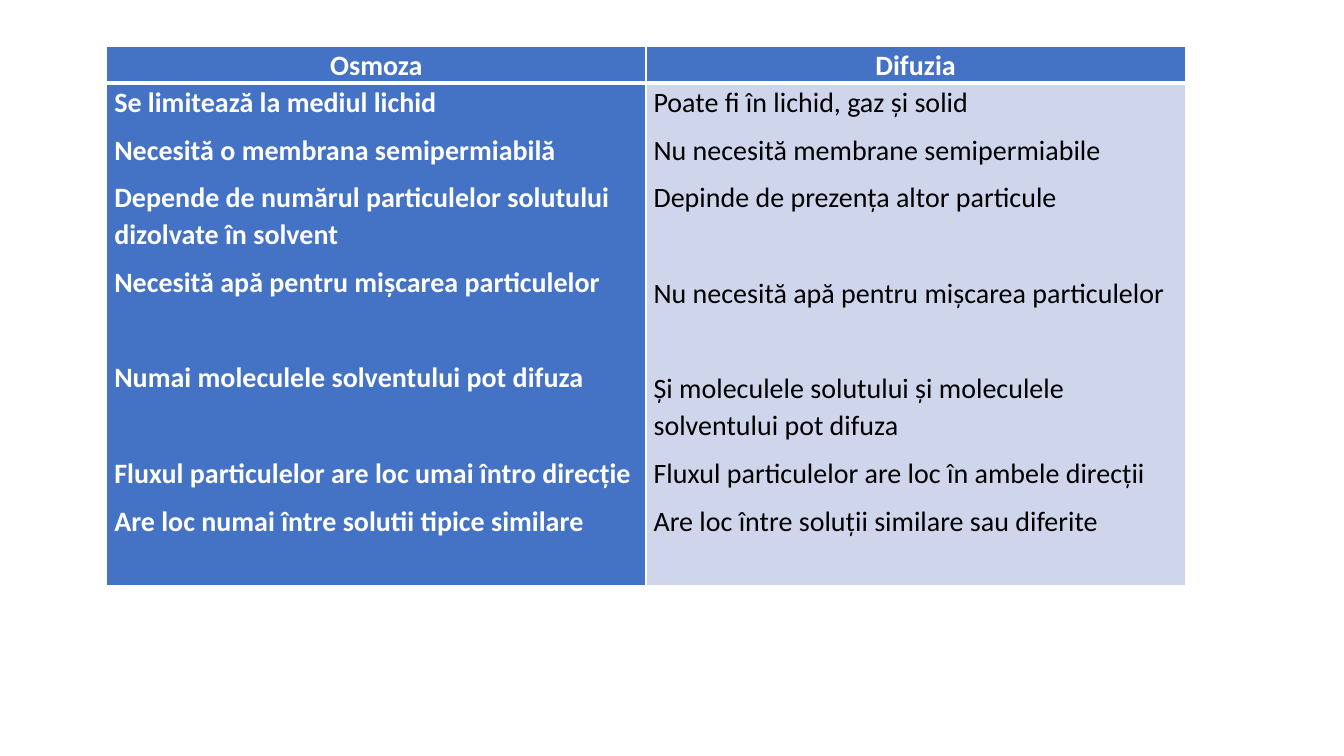
from dataclasses import dataclass

from lxml.etree import SubElement
from pptx import Presentation
from pptx.dml.color import RGBColor
from pptx.enum.text import PP_ALIGN as Align
from pptx.oxml.ns import qn
from pptx.util import Cm, Pt


@dataclass(frozen=True)
class Theme:
    font: str = "Calibri"
    size: int = 20
    blue: str = "4472C4"
    pale: str = "CFD5EA"
    white: str = "FFFFFF"
    black: str = "000000"
    thin: float = 1
    thick: float = 3
    line_spacing: float = 1.07
    gap: int = 8
    wide_gap: int = 42


theme = Theme()

# Each concept: heading, body fill, body text colour, body bold, statements with the space after them
concepts = [
    ("Osmoza", theme.blue, theme.white, True, [
        ("Se limitează la mediul lichid", theme.gap),
        ("Necesită o membrana semipermiabilă", theme.gap),
        ("Depende de numărul particulelor solutului dizolvate în solvent", theme.gap),
        ("Necesită apă pentru mișcarea particulelor", theme.wide_gap),
        ("Numai moleculele solventului pot difuza", theme.wide_gap),
        ("Fluxul particulelor are loc umai întro direcție", theme.gap),
        ("Are loc numai între solutii tipice similare", theme.gap),
    ]),
    ("Difuzia", theme.pale, theme.black, False, [
        ("Poate fi în lichid, gaz și solid", theme.gap),
        ("Nu necesită membrane semipermiabile", theme.gap),
        ("Depinde de prezența altor particule", theme.wide_gap),
        ("Nu necesită apă pentru mișcarea particulelor", theme.wide_gap),
        ("Și moleculele solutului și moleculele solventului pot difuza", theme.gap),
        ("Fluxul particulelor are loc în ambele direcții", theme.gap),
        ("Are loc între soluții similare sau diferite", theme.gap),
    ]),
]


def style_cell(cell, fill, borders):
    """Set margins, white borders (side to width in points) and fill."""
    margins = {"margin_left": Cm(0.19), "margin_right": Cm(0.19),
               "margin_top": Cm(0), "margin_bottom": Cm(0)}
    for name, value in margins.items():
        setattr(cell, name, value)
    properties = cell._tc.get_or_add_tcPr()
    for side, width in borders.items():
        border = SubElement(properties, qn(f"a:ln{side}"), w=str(Pt(width)))
        paint = SubElement(border, qn("a:solidFill"))
        SubElement(paint, qn("a:srgbClr"), val=theme.white)
    cell.fill.solid()
    cell.fill.fore_color.rgb = RGBColor.from_string(fill)


def write_statements(cell, statements, color, bold, align):
    frame = cell.text_frame
    for index, (statement, space_after) in enumerate(statements):
        paragraph = frame.add_paragraph() if index else frame.paragraphs[0]
        layout = {"alignment": align, "line_spacing": theme.line_spacing,
                  "space_after": Pt(space_after)}
        for name, value in layout.items():
            setattr(paragraph, name, value)
        run = paragraph.add_run()
        run.text = statement
        look = {"name": theme.font, "size": Pt(theme.size), "bold": bold}
        for name, value in look.items():
            setattr(run.font, name, value)
        run.font.color.rgb = RGBColor.from_string(color)


prs = Presentation()
prs.slide_width, prs.slide_height = Cm(33.87), Cm(19.05)
slide = prs.slides.add_slide(prs.slide_layouts[6])

column_width, heading_height, body_height = Cm(13.59), Cm(0.92), Cm(12.67)
comparison = slide.shapes.add_table(
    2, len(concepts), Cm(2.69), Cm(1.17),
    column_width * len(concepts), heading_height + body_height).table
comparison.first_col = True
comparison.rows[0].height = heading_height
comparison.rows[1].height = body_height

heading_borders = {"L": theme.thin, "R": theme.thin, "T": theme.thin, "B": theme.thick}
body_borders = {"L": theme.thin, "R": theme.thin, "T": theme.thick, "B": theme.thin}

for column, (heading, fill, color, bold, statements) in enumerate(concepts):
    comparison.columns[column].width = column_width
    heading_cell, body_cell = comparison.cell(0, column), comparison.cell(1, column)
    style_cell(heading_cell, theme.blue, heading_borders)
    write_statements(heading_cell, [(heading, theme.gap)], theme.white, True, Align.CENTER)
    style_cell(body_cell, fill, body_borders)
    write_statements(body_cell, statements, color, bold, Align.LEFT)

prs.save("out.pptx")
